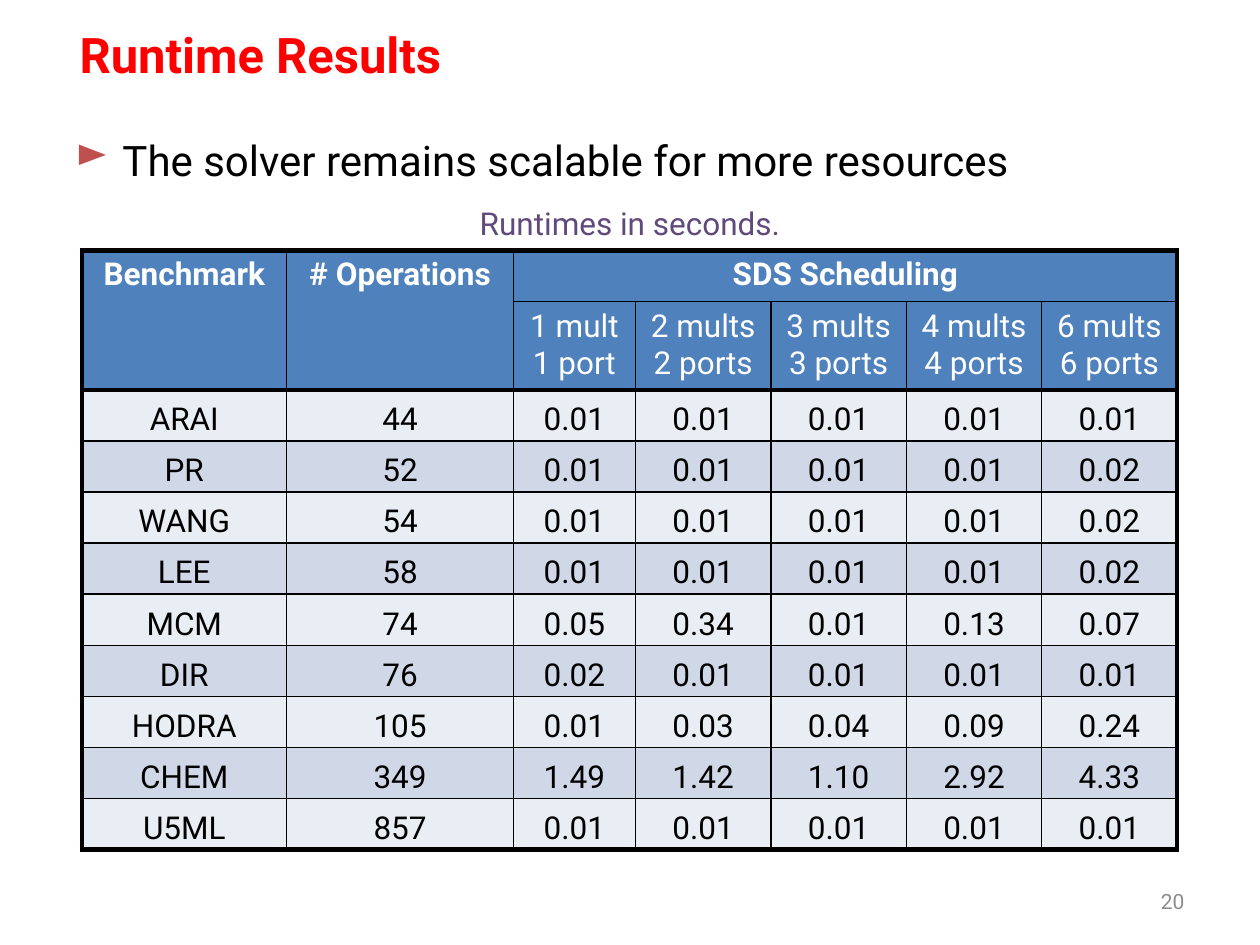
from dataclasses import dataclass

from lxml import etree
from pptx import Presentation
from pptx.dml.color import RGBColor
from pptx.enum.text import MSO_ANCHOR, PP_ALIGN
from pptx.oxml.ns import qn
from pptx.util import Cm, Pt

LEFT, CENTER, RIGHT = PP_ALIGN.LEFT, PP_ALIGN.CENTER, PP_ALIGN.RIGHT
TOP, MIDDLE, BOTTOM = MSO_ANCHOR.TOP, MSO_ANCHOR.MIDDLE, MSO_ANCHOR.BOTTOM
FONT = "Roboto"
BLACK, WHITE, HEADER_BLUE = "000000", "FFFFFF", "4F81BD"
BANDS = ("E9EDF4", "D0D8E8")
THIN, THICK = 1, 3
COLUMN_WIDTHS = [4.13, 4.57, 2.46] + [2.73] * 4
ROW_HEIGHTS = [1.03, 1.74] + [1.03] * 9
HEADER_ROWS = 2
RESOURCE_COUNTS = (1, 2, 3, 4, 6)


@dataclass
class Style:
    size: float
    color: str
    bold: bool = False
    align: PP_ALIGN = LEFT
    anchor: MSO_ANCHOR = TOP


@dataclass
class Label:
    text: str
    left: float
    top: float
    width: float
    height: float
    style: Style


@dataclass
class Benchmark:
    name: str
    operations: int
    runtimes: tuple[float, ...]


TITLE = Label("Runtime Results", 1.35, 0.08, 22.86, 2.03, Style(28, "FF0000", True, anchor=MIDDLE))
MESSAGE = Label("The solver remains scalable for more resources", 1.27, 2.59, 22.86, 12.57,
                Style(24, BLACK))
CAPTION = Label("Runtimes in seconds.", 0, 3.99, 25.4, 1.02, Style(18, "604A7B", align=CENTER))
PAGE_NUMBER = Label("20", 18.21, 17.65, 5.92, 1.02,
                    Style(12, "8C8C8C", align=RIGHT, anchor=MIDDLE))

BENCHMARKS = [
    Benchmark("ARAI", 44, (0.01, 0.01, 0.01, 0.01, 0.01)),
    Benchmark("PR", 52, (0.01, 0.01, 0.01, 0.01, 0.02)),
    Benchmark("WANG", 54, (0.01, 0.01, 0.01, 0.01, 0.02)),
    Benchmark("LEE", 58, (0.01, 0.01, 0.01, 0.01, 0.02)),
    Benchmark("MCM", 74, (0.05, 0.34, 0.01, 0.13, 0.07)),
    Benchmark("DIR", 76, (0.02, 0.01, 0.01, 0.01, 0.01)),
    Benchmark("HODRA", 105, (0.01, 0.03, 0.04, 0.09, 0.24)),
    Benchmark("CHEM", 349, (1.49, 1.42, 1.10, 2.92, 4.33)),
    Benchmark("U5ML", 857, (0.01, 0.01, 0.01, 0.01, 0.01)),
]


def rgb(color: str) -> RGBColor:
    return RGBColor.from_string(color)


def write(frame, text: str, style: Style) -> None:
    frame.text = text
    for para in frame.paragraphs:
        para.alignment = style.align
        para.font.name = FONT
        para.font.size = Pt(style.size)
        para.font.bold = style.bold
        para.font.color.rgb = rgb(style.color)


def place(box, label: Label) -> None:
    box.left, box.top = Cm(label.left), Cm(label.top)
    box.width, box.height = Cm(label.width), Cm(label.height)
    box.text_frame.word_wrap = True
    box.text_frame.vertical_anchor = label.style.anchor
    write(box.text_frame, label.text, label.style)


def add_label(page, label: Label):
    box = page.shapes.add_textbox(0, 0, 0, 0)
    place(box, label)
    return box


def add_bullet(para, symbol: str, color: str, indent: float) -> None:
    properties = para._p.get_or_add_pPr()
    properties.set("marL", str(Cm(indent)))
    properties.set("indent", str(-Cm(indent)))
    bullet_color = etree.SubElement(properties, qn("a:buClr"))
    etree.SubElement(bullet_color, qn("a:srgbClr"), val=color)
    bullet = etree.SubElement(properties, qn("a:buChar"), char=symbol)
    properties.remove(bullet_color)
    properties.remove(bullet)
    position = properties.index(properties.find(qn("a:defRPr")))
    properties.insert(position, bullet_color)
    properties.insert(position + 1, bullet)


def add_borders(cell, row: int, column: int) -> None:
    last_row = row + cell.span_height - 1
    last_column = column + cell.span_width - 1
    heavy = {
        "a:lnL": column == 0,
        "a:lnR": last_column == len(COLUMN_WIDTHS) - 1,
        "a:lnT": row in (0, HEADER_ROWS),
        "a:lnB": last_row in (HEADER_ROWS - 1, len(ROW_HEIGHTS) - 1),
    }
    properties = cell._tc.get_or_add_tcPr()
    for side, is_heavy in heavy.items():
        width = Pt(THICK if is_heavy else THIN)
        line = etree.SubElement(properties, qn(side), w=str(width))
        fill = etree.SubElement(line, qn("a:solidFill"))
        etree.SubElement(fill, qn("a:srgbClr"), val=BLACK)


def format_cell(cell, row: int, column: int, text: str) -> None:
    is_header = row < HEADER_ROWS
    add_borders(cell, row, column)
    cell.fill.solid()
    cell.fill.fore_color.rgb = rgb(HEADER_BLUE if is_header else BANDS[(row - HEADER_ROWS) % 2])
    if not is_header:
        cell.vertical_anchor = BOTTOM
        cell.margin_left = cell.margin_right = Cm(0.08)
        cell.margin_top = cell.margin_bottom = Cm(0.05)
    write(cell.text_frame, text, Style(18, WHITE if is_header else BLACK, row == 0, CENTER))


def table_rows() -> list[list[str]]:
    groups = ["Benchmark", "# Operations", "SDS Scheduling"] + [""] * 4
    resources = ["", ""]
    for count in RESOURCE_COUNTS:
        plural = "" if count == 1 else "s"
        resources.append(f"{count} mult{plural}\n{count} port{plural}")
    results = [[item.name, str(item.operations), *(f"{value:.2f}" for value in item.runtimes)]
               for item in BENCHMARKS]
    return [groups, resources, *results]


def add_runtime_table(page) -> None:
    frame = page.shapes.add_table(len(ROW_HEIGHTS), len(COLUMN_WIDTHS), Cm(1.65), Cm(5.05),
                                  Cm(sum(COLUMN_WIDTHS)), Cm(sum(ROW_HEIGHTS)))
    table = frame.table
    table.first_row = table.horz_banding = False
    for column, width in zip(table.columns, COLUMN_WIDTHS):
        column.width = Cm(width)
    for row, height in zip(table.rows, ROW_HEIGHTS):
        row.height = Cm(height)
    for column in (0, 1):
        table.cell(0, column).merge(table.cell(1, column))
    table.cell(0, 2).merge(table.cell(0, len(COLUMN_WIDTHS) - 1))
    for row, texts in enumerate(table_rows()):
        for column, text in enumerate(texts):
            format_cell(table.cell(row, column), row, column, text)


def main() -> None:
    deck = Presentation()
    deck.slide_width, deck.slide_height = Cm(25.4), Cm(19.05)
    page = deck.slides.add_slide(deck.slide_layouts[5])
    place(page.shapes.title, TITLE)
    message = add_label(page, MESSAGE).text_frame.paragraphs[0]
    message.space_before = Pt(18)
    add_bullet(message, "►", "C0504D", 0.95)
    add_label(page, PAGE_NUMBER)
    add_runtime_table(page)
    add_label(page, CAPTION)
    deck.save("out.pptx")


if __name__ == "__main__":
    main()
